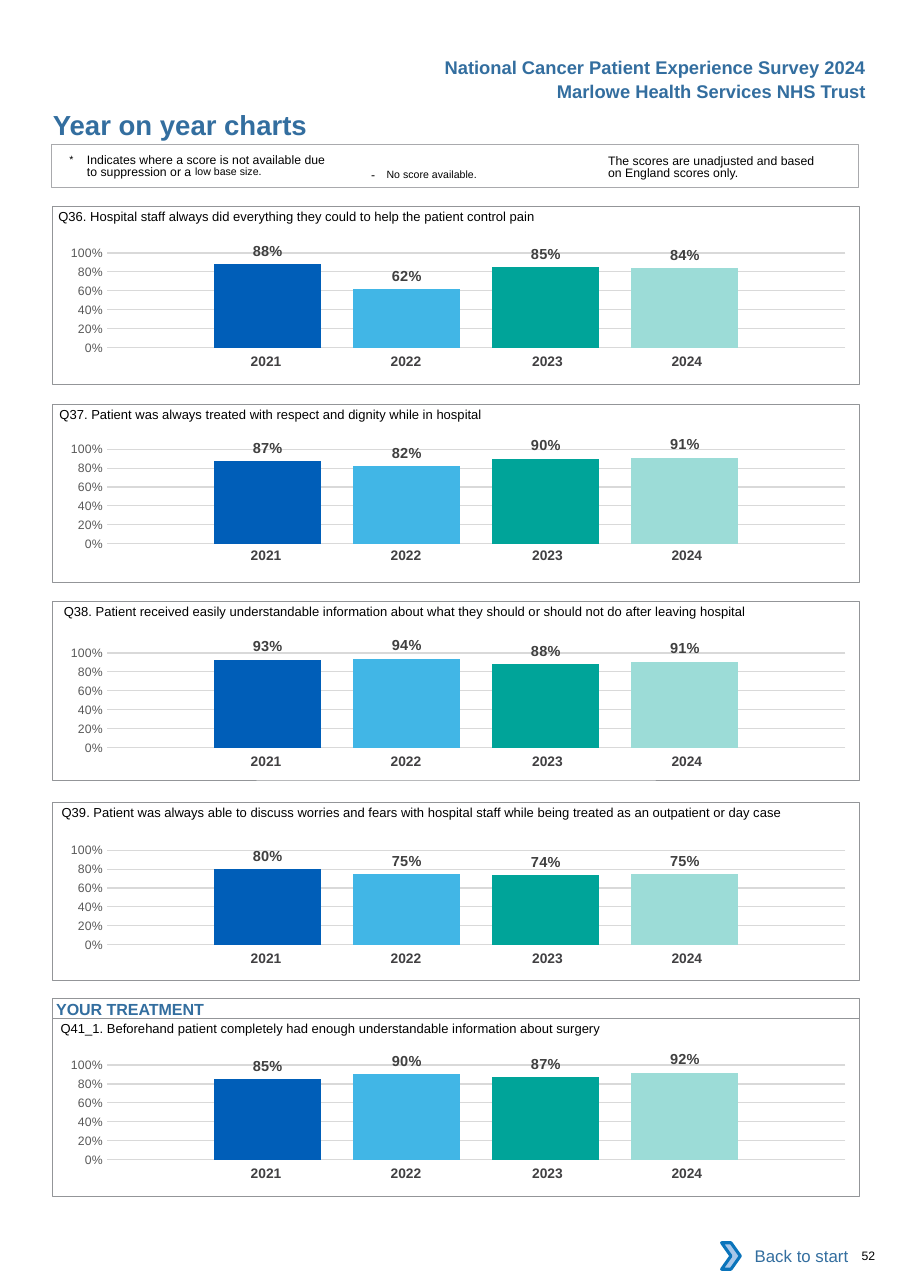
import dataclasses
import pptx
import pptx.chart.data
import pptx.dml.color
import pptx.enum.chart
import pptx.enum.shapes
import pptx.enum.text
import pptx.oxml
import pptx.oxml.ns
import pptx.util

Inches = pptx.util.Inches
Align = pptx.enum.text.PP_ALIGN
Anchor = pptx.enum.text.MSO_ANCHOR
Shape = pptx.enum.shapes.MSO_SHAPE


@dataclasses.dataclass
class Theme:
    font: str = "Arial"
    base: str = "Calibri"
    blue: str = "336E9F"
    black: str = "000000"
    white: str = "FFFFFF"
    frame: str = "939598"
    pale: str = "A9AAAD"
    grid: str = "D9D9D9"
    tick: str = "595959"
    label: str = "404040"
    year: str = "414042"
    arrow: str = "A8C7E9"
    edge: str = "0A74BB"
    bars: tuple = ("005EB8", "41B6E6", "00A499", "9CDCD7")
    title: float = 18
    head: float = 12
    band: float = 10.5
    link: float = 11
    ask: float = 8.5
    note: float = 8
    mark: float = 9.5
    date: float = 9


def color(code):
    return pptx.dml.color.RGBColor.from_string(code)


def style(font, name, size, code, bold=False):
    font.name, font.size, font.bold = name, pptx.util.Pt(size), bold
    font.color.rgb = color(code)


def write(frame, runs, name="Arial", size=8, code="000000", bold=False,
          align=None, anchor=None, inset=(0, 0, 0, 0), line=None, hang=0):
    """Fill a text frame; runs is a string or (text, changes) pairs."""
    frame.word_wrap = True
    (frame.margin_left, frame.margin_top,
     frame.margin_right, frame.margin_bottom) = map(Inches, inset)
    frame.vertical_anchor = anchor or Anchor.TOP
    para = frame.paragraphs[0]
    para.alignment = align or Align.LEFT
    if line:
        para.line_spacing = pptx.util.Pt(line)
    if hang:
        props = para._p.get_or_add_pPr()
        props.set("marL", str(Inches(hang)))
        props.set("indent", str(-Inches(hang)))
    for text, change in [(runs, {})] if isinstance(runs, str) else runs:
        run = para.add_run()
        run.text = text
        style(run.font, name, change.get("size", size), code, bold)
        for key in ("baseline", "spc"):
            if key in change:
                run._r.get_or_add_rPr().set(key, str(change[key]))


class Page:
    def __init__(self, slide, theme):
        self.slide, self.theme = slide, theme

    def text(self, box, runs, **form):
        item = self.slide.shapes.add_textbox(*map(Inches, box))
        write(item.text_frame, runs, name=self.theme.font, **form)

    def shape(self, box, kind=Shape.RECTANGLE, fill=None, line=None, width=0.5):
        item = self.slide.shapes.add_shape(kind, *map(Inches, box))
        item.shadow.inherit = False
        if fill:
            item.fill.solid()
            item.fill.fore_color.rgb = color(fill)
        else:
            item.fill.background()
        if line:
            item.line.color.rgb = color(line)
            item.line.width = pptx.util.Pt(width)
        else:
            item.line.fill.background()
        return item

    def years(self, top):
        table = self.slide.shapes.add_table(
            1, 4, *map(Inches, (1.73, top, 5.15, 0.27))).table
        table.first_row = table.horz_banding = False
        table.rows[0].height = Inches(0.27)
        for i, (wide, right) in enumerate(
                zip((1.27, 1.27, 1.34, 1.27), (0, 0, 0.04, 0.12))):
            table.columns[i].width = Inches(wide)
            cell = table.cell(0, i)
            cell.fill.background()
            write(cell.text_frame, str(2021 + i), name=self.theme.font,
                  size=self.theme.date, code=self.theme.year, bold=True,
                  align=Align.CENTER)
            cell.margin_left, cell.margin_right = Inches(0.1), Inches(right)
            cell.margin_top = cell.margin_bottom = Inches(0.05)

    def chart(self, top, scores):
        look, enum = self.theme, pptx.enum.chart
        data = pptx.chart.data.CategoryChartData(number_format="0%")
        data.categories = ["1"]
        for i, score in enumerate(scores, 1):
            data.add_series(f"Series {i}", [score / 100])
        chart = self.slide.shapes.add_chart(
            enum.XL_CHART_TYPE.COLUMN_CLUSTERED,
            *map(Inches, (0.39, top, 7.32, 1.29)), data).chart
        chart.has_legend = chart.has_title = False
        style(chart.font, look.base, 10, look.black)
        chart.category_axis.visible = False
        axis = chart.value_axis
        axis.minimum_scale, axis.maximum_scale, axis.major_unit = 0, 1, 0.2
        axis.major_tick_mark = enum.XL_TICK_MARK.NONE
        axis.format.line.fill.background()
        axis.major_gridlines.format.line.color.rgb = color(look.grid)
        axis.major_gridlines.format.line.width = pptx.util.Pt(0.75)
        axis.tick_labels.number_format = "0%"
        axis.tick_labels.number_format_is_linked = False
        style(axis.tick_labels.font, look.font, look.note, look.tick)
        plot = chart.plots[0]
        plot.gap_width, plot.overlap, plot.vary_by_categories = 200, -30, False
        for series, code in zip(plot.series, look.bars):
            series.format.fill.solid()
            series.format.fill.fore_color.rgb = color(code)
            labels = series.data_labels
            labels.show_value = True
            labels.position = enum.XL_LABEL_POSITION.OUTSIDE_END
            labels.number_format = "0%"
            labels.number_format_is_linked = False
            style(labels.font, look.font, look.mark, look.label, True)
        self.place(chart)

    def place(self, chart):
        """Pin the inner plot area and clear the chart background."""
        names = pptx.oxml.ns.nsdecls("c", "a")
        rules = [("layoutTarget", "inner"), ("xMode", "edge"), ("yMode", "edge"),
                 ("x", 0.08), ("y", 0.145), ("w", 0.915), ("h", 0.666)]
        inner = "".join(f'<c:{tag} val="{val}"/>' for tag, val in rules)
        area = chart._chartSpace.chart.plotArea
        for old in area.findall(pptx.oxml.ns.qn("c:layout")):
            area.remove(old)
        area.insert(0, pptx.oxml.parse_xml(
            f"<c:layout {names}><c:manualLayout>{inner}</c:manualLayout></c:layout>"))
        chart._chartSpace.chart.addnext(pptx.oxml.parse_xml(
            f"<c:spPr {names}><a:noFill/><a:ln><a:noFill/></a:ln></c:spPr>"))

    def panel(self, ask, left, top, graph, dates, scores):
        """Draw one framed question with its chart and year row."""
        self.years(dates)
        self.chart(graph, scores)
        self.text((left, top - 0.07, 7.2, 0.24), ask, size=self.theme.ask,
                  inset=(0, 0.09, 0, 0))
        self.shape((0.48, top, 7.32, 1.62), line=self.theme.frame)


PANELS = [
    ("Q36. Hospital staff always did everything they could to help the patient "
     "control pain", 0.53, 1.87, 2.11, 3.16, (88, 62, 85, 84)),
    ("Q37. Patient was always treated with respect and dignity while in hospital",
     0.54, 3.67, 3.89, 4.92, (87, 82, 90, 91)),
    ("Q38. Patient received easily understandable information about what they "
     "should or should not do after leaving hospital",
     0.58, 5.46, 5.74, 6.79, (93, 94, 88, 91)),
    ("Q39. Patient was always able to discuss worries and fears with hospital "
     "staff while being treated as an outpatient or day case",
     0.56, 7.28, 7.53, 8.58, (80, 75, 74, 75)),
    ("Q41_1. Beforehand patient completely had enough understandable information "
     "about surgery", 0.55, 9.24, 9.48, 10.53, (85, 90, 87, 92)),
]

deck = pptx.Presentation()
deck.slide_width, deck.slide_height = Inches(8.26), Inches(11.69)
look = Theme()
page = Page(deck.slides.add_slide(deck.slide_layouts[6]), look)

for top, line in ((0.46, "National Cancer Patient Experience Survey 2024"),
                  (0.68, "Marlowe Health Services NHS Trust")):
    page.text((3.46, top, 4.5, 0.3), line, size=look.head, code=look.blue,
              bold=True, align=Align.RIGHT, inset=(0.1, 0.05, 0.1, 0.05))
page.text((0.48, 0.98, 4.5, 0.3), "Year on year charts", size=look.title,
          code=look.blue, bold=True)

page.shape((0.47, 1.31, 7.32, 0.39), line=look.pale, width=0.75)
small = {"size": look.head, "baseline": 3000}
page.text((0.63, 1.38, 2.4, 0.27),
          [("*\t", small),
           ("Indicates where a score is not available due to suppression or a ", {}),
           ("low base size.", {"size": look.head, "baseline": 7000})],
          size=look.note, inset=(0, 0.03, 0, 0), line=8.1, hang=0.16)
page.text((3.27, 1.41, 1.83, 0.24),
          [("- ", {"spc": 260}), ("No score available.", small)],
          size=look.note, inset=(0.1, 0.05, 0.1, 0.05))
page.text((5.52, 1.38, 1.95, 0.27),
          "The scores are unadjusted and based on England scores only.",
          size=look.note, inset=(0, 0.03, 0, 0), line=8.1)

for panel in PANELS:
    page.panel(*panel)
band = page.shape((0.48, 9.06, 7.32, 0.18), line=look.frame)
write(band.text_frame, "YOUR TREATMENT", size=look.band, code=look.blue,
      bold=True, inset=(0.03, 0.01, 0, 0))

back = page.shape((6.62, 11.19, 1.18, 0.42), fill=look.white)
write(back.text_frame, "Back to start", size=look.link, code=look.blue,
      align=Align.RIGHT, anchor=Anchor.MIDDLE, inset=(0.1, 0.05, 0.1, 0.05))
page.shape((6.55, 11.28, 0.17, 0.24), Shape.CHEVRON, look.arrow, look.edge, 2)
page.text((7.82, 11.33, 0.41, 0.13), "52", size=look.note)

deck.save("out.pptx")
